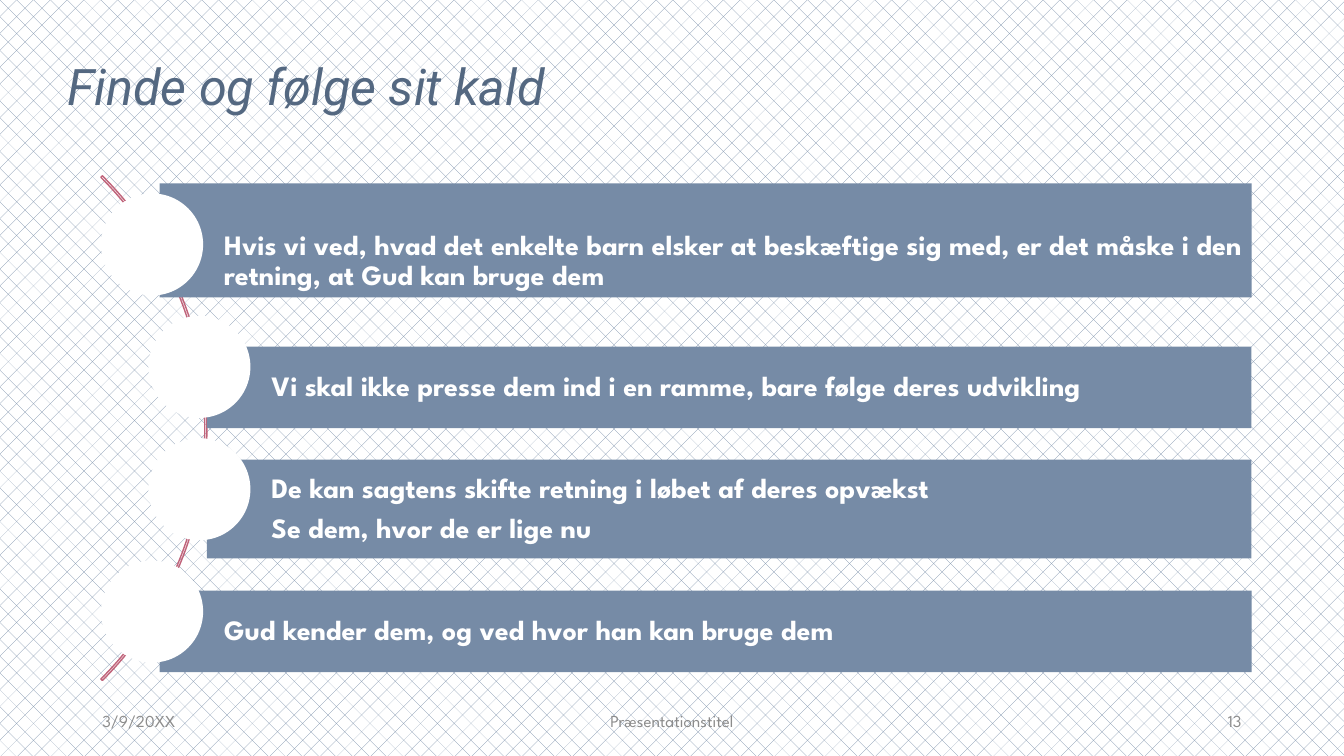
from dataclasses import dataclass

from lxml import etree
from pptx import Presentation
from pptx.dml.color import RGBColor
from pptx.enum.dml import MSO_PATTERN
from pptx.enum.shapes import MSO_SHAPE
from pptx.enum.text import MSO_ANCHOR, MSO_AUTO_SIZE, PP_ALIGN
from pptx.util import Pt

LEFT, CENTER, RIGHT = PP_ALIGN.LEFT, PP_ALIGN.CENTER, PP_ALIGN.RIGHT
MIDDLE, BOTTOM = MSO_ANCHOR.MIDDLE, MSO_ANCHOR.BOTTOM
RECTANGLE, OVAL, BLOCK_ARC = MSO_SHAPE.RECTANGLE, MSO_SHAPE.OVAL, MSO_SHAPE.BLOCK_ARC
DOTTED_DIAMOND = MSO_PATTERN.DOTTED_DIAMOND
NO_AUTOFIT = MSO_AUTO_SIZE.NONE
TITLE_ONLY_LAYOUT = 5


@dataclass(frozen=True)
class Theme:
    bar: RGBColor = RGBColor.from_string("768BA6")
    white: RGBColor = RGBColor.from_string("FFFFFF")
    title: RGBColor = RGBColor.from_string("546881")
    arc: RGBColor = RGBColor.from_string("C0637A")
    footer: RGBColor = RGBColor.from_string("8C8C8C")
    title_font: str = "Roboto"
    body_font: str = "League Spartan"
    title_size: int = 36
    body_size: int = 20
    footer_size: int = 12


THEME = Theme()

BARS = [
    (0, 0, 81.4, BOTTOM, ["Hvis vi ved, hvad det enkelte barn elsker at beskæftige sig med, "
                          "er det måske i den retning, at Gud kan bruge dem"]),
    (33.8, 116.6, 58.3, MIDDLE,
     ["Vi skal ikke presse dem ind i en ramme, bare følge deres udvikling"]),
    (33.8, 197.3, 70.6, MIDDLE, ["De kan sagtens skifte retning i løbet af deres opvækst",
                                 "Se dem, hvor de er lige nu"]),
    (0, 290.8, 58.3, MIDDLE, ["Gud kender dem, og ved hvor han kan bruge dem"]),
]


def write_text(shape, lines, *, size, color, font=THEME.body_font, bold=False, italic=False,
               align=LEFT, anchor=MIDDLE, spacing=1.0, gap=0, insets=(7.2, 3.6, 7.2, 3.6)):
    frame = shape.text_frame
    frame.word_wrap = True
    frame.auto_size = NO_AUTOFIT
    frame.vertical_anchor = anchor
    frame.margin_left, frame.margin_top, frame.margin_right, frame.margin_bottom = map(Pt, insets)
    for index, line in enumerate(lines):
        paragraph = frame.add_paragraph() if index else frame.paragraphs[0]
        paragraph.alignment = align
        paragraph.line_spacing = spacing
        paragraph.space_before = Pt(0)
        paragraph.space_after = Pt(gap if index < len(lines) - 1 else 0)
        run = paragraph.add_run()
        run.text = line
        run.font.name = font
        run.font.size = Pt(size)
        run.font.bold = bold
        run.font.italic = italic
        run.font.color.rgb = color


def add_filled_shape(slide, kind, box, color):
    shape = slide.shapes.add_shape(kind, *map(Pt, box))
    shape.shadow.inherit = False
    shape.fill.solid()
    shape.fill.fore_color.rgb = color
    shape.line.fill.background()
    return shape


def set_background(slide):
    fill = slide.background.fill
    fill.patterned()
    fill.pattern = DOTTED_DIAMOND
    fill.fore_color.rgb = THEME.bar
    fill.back_color.rgb = THEME.white


def add_title(slide, box):
    title = slide.shapes.title
    title.left, title.top, title.width, title.height = map(Pt, box)
    write_text(title, ["Finde og følge sit kald"], size=THEME.title_size, color=THEME.title,
               font=THEME.title_font, italic=True, spacing=1.07)


def add_arc(slide, box):
    arc = slide.shapes.add_shape(BLOCK_ARC, *map(Pt, box))
    arc.shadow.inherit = False
    arc.adjustments[0] = 189
    arc.adjustments[1] = 27
    arc.adjustments[2] = 0.003
    arc.fill.background()
    arc.line.color.rgb = THEME.arc
    arc.line.width = Pt(1)


def add_curved_list(slide, box):
    left, top, width, height = box
    diameter, circle_offset, circle_top, circle_pitch = 72.9, 41.8, 7.2, 87.4
    arc_size = 509.8
    add_arc(slide, (left - 476, top + height / 2 - arc_size / 2 + 0.3, arc_size, arc_size))
    for index, (indent, offset, bar_height, anchor, lines) in enumerate(BARS):
        bar_left = left + indent
        bar = add_filled_shape(slide, RECTANGLE,
                               (bar_left, top + offset, width - indent, bar_height), THEME.bar)
        write_text(bar, lines, size=THEME.body_size, color=THEME.white, bold=True,
                   anchor=anchor, spacing=0.9, gap=7, insets=(46.1, 4.3, 4.3, 4.3))
        add_filled_shape(slide, OVAL, (bar_left - circle_offset,
                                       top + circle_top + index * circle_pitch,
                                       diameter, diameter), THEME.white)


def add_footer(slide, box):
    left, top, width, height = box
    side_width, middle_width = 216, 324
    parts = [
        ("3/9/20XX", left, side_width, LEFT),
        ("Præsentationstitel", left + (width - middle_width) / 2, middle_width, CENTER),
        ("13", left + width - side_width, side_width, RIGHT),
    ]
    for text, part_left, part_width, align in parts:
        text_box = slide.shapes.add_textbox(Pt(part_left), Pt(top), Pt(part_width), Pt(height))
        write_text(text_box, [text], size=THEME.footer_size, color=THEME.footer, align=align)


def main():
    presentation = Presentation()
    presentation.slide_width, presentation.slide_height = Pt(960), Pt(540)
    slide = presentation.slides.add_slide(presentation.slide_layouts[TITLE_ONLY_LAYOUT])
    set_background(slide)
    add_title(slide, (41, 28.8, 893.5, 61.9))
    add_curved_list(slide, (114, 131, 780, 349.1))
    add_footer(slide, (66, 500.4, 828, 28.8))
    presentation.save("out.pptx")


if __name__ == "__main__":
    main()
